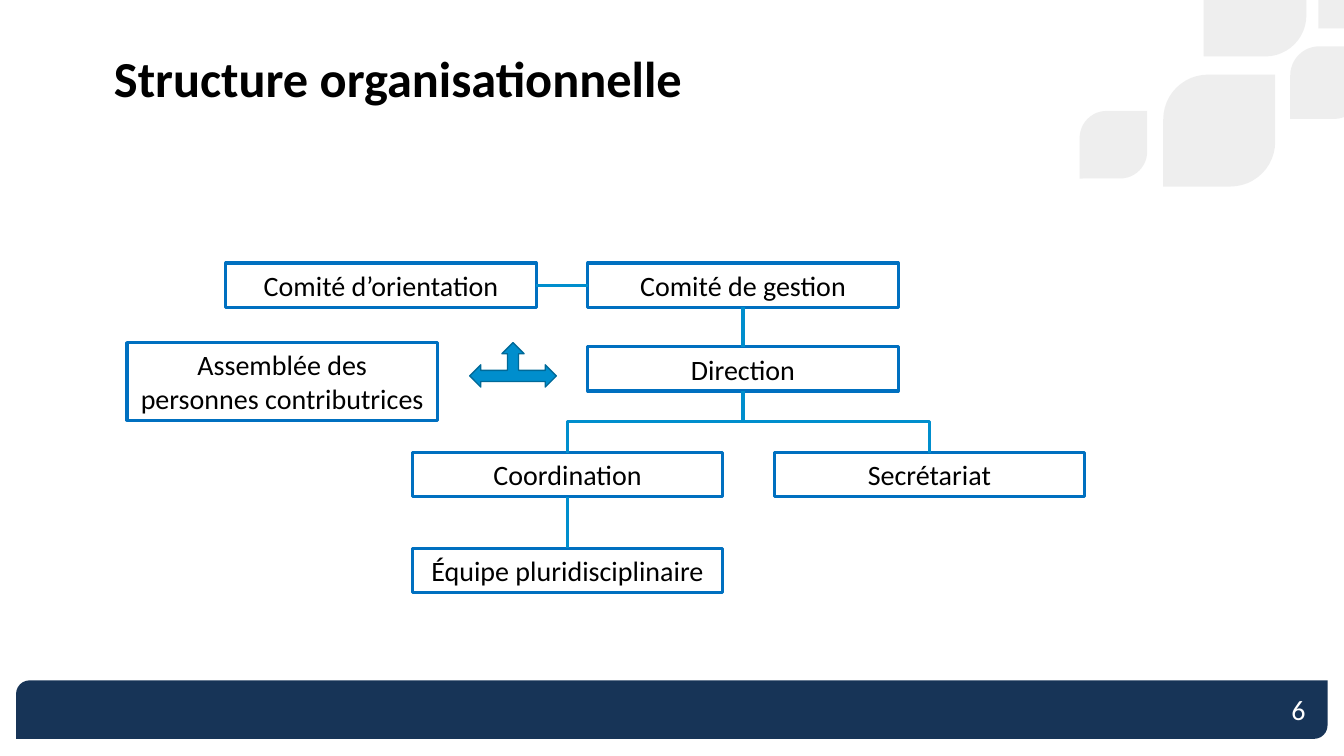
from dataclasses import dataclass

from lxml import etree
from pptx import Presentation
from pptx import util as u
from pptx.dml.color import RGBColor
from pptx.enum import shapes, text
from pptx.oxml.ns import qn

W, H = u.Inches(13.333), u.Inches(7.5)
BOX_W, ONE_LINE, TWO_LINES = 23.1, 5.87, 10.27
TOP, BOTTOM, LEFT, RIGHT = 0, 2, 1, 3

BOXES = {
    "orientation": ("Comité d’orientation", 16.8, 34.8, ONE_LINE),
    "assemblee": ("Assemblée des personnes contributrices", 9.45, 45.33, TWO_LINES),
    "coordination": ("Coordination", 30.68, 59.87, ONE_LINE),
    "direction": ("Direction", 43.73, 45.87, ONE_LINE),
    "gestion": ("Comité de gestion", 43.73, 34.8, ONE_LINE),
    "secretariat": ("Secrétariat", 57.6, 59.87, ONE_LINE),
    "equipe": ("Équipe pluridisciplinaire", 30.68, 72.53, ONE_LINE),
}
LINKS = [
    ("gestion", BOTTOM, "direction", TOP),
    ("direction", BOTTOM, "secretariat", TOP),
    ("direction", BOTTOM, "coordination", TOP),
    ("coordination", BOTTOM, "equipe", TOP),
    ("orientation", RIGHT, "gestion", LEFT),
]
LEAVES = [
    (86.55, 9.87, 8.33),
    (96, 6.13, 5.4),
    (89.55, -6.13, 7.65),
    (98.1, -3.87, 4.28),
    (80.33, 14.67, 5.03),
]


@dataclass(frozen=True)
class Theme:
    """Colours, font and type sizes of the slide."""
    font: str = "Calibri"
    ink: str = "000000"
    paper: str = "FFFFFF"
    leaf: str = "E8E8E8"
    navy: str = "173457"
    border: str = "0070C0"
    link: str = "008ECD"
    arrow_edge: str = "006998"
    title: int = 36
    body: int = 20
    stroke: float = 2.25


THEME = Theme()


def area(x, y, w, h):
    """Turn percentages of the slide's width and height into lengths."""
    return [round(v * side / 100) for v, side in zip((x, y, w, h), (W, H, W, H))]


def set_all(obj, values):
    """Set every attribute named in a dict."""
    for name, value in values.items():
        setattr(obj, name, value)


def write(tf, words, size, color, align, bold=False, grow=True):
    """Fill a text frame with one formatted paragraph."""
    fit = text.MSO_AUTO_SIZE.SHAPE_TO_FIT_TEXT if grow else text.MSO_AUTO_SIZE.NONE
    set_all(tf, {"word_wrap": True, "auto_size": fit,
                 "vertical_anchor": text.MSO_ANCHOR.MIDDLE})
    p = tf.paragraphs[0]
    p.alignment = align
    r = p.add_run()
    r.text = words
    set_all(r.font, {"name": THEME.font, "size": u.Pt(size), "bold": bold})
    r.font.color.rgb = RGBColor.from_string(color)


def add_shape(s, kind, box, fill=None, line=None, width=1, adj=None):
    """Add a preset shape with its fill and outline."""
    sp = s.shapes.add_shape(kind, *box)
    sp.shadow.inherit = False
    if fill:
        sp.fill.solid()
        sp.fill.fore_color.rgb = RGBColor.from_string(fill)
    else:
        sp.fill.background()
    if line:
        sp.line.color.rgb = RGBColor.from_string(line)
        sp.line.width = u.Pt(width)
    else:
        sp.line.fill.background()
    if adj is not None:
        sp.adjustments[0] = adj
    return sp


def add_leaf(s, x, y, side):
    """Add a translucent square leaf."""
    left, top, size, _ = area(x, y, side, 0)
    sp = add_shape(s, shapes.MSO_SHAPE.ROUND_2_DIAG_RECTANGLE,
                   (left, top, size, size), THEME.leaf, adj=0.4)
    color = sp._element.spPr.find(".//" + qn("a:srgbClr"))
    etree.SubElement(color, qn("a:alpha")).set("val", "70000")


def add_box(s, words, x, y, h):
    """Add an outlined box of the organisation chart."""
    sp = add_shape(s, shapes.MSO_SHAPE.RECTANGLE, area(x, y, BOX_W, h),
                   line=THEME.border, width=THEME.stroke)
    write(sp.text_frame, words, THEME.body, THEME.ink, text.PP_ALIGN.CENTER)
    return sp


def turn_elbow(cn):
    """Make an elbow leave and arrive vertically."""
    to_right = cn.end_x > cn.begin_x
    x, y, w, h = cn.left, cn.top, cn.width, cn.height
    set_all(cn, {"left": x + (w - h) // 2, "top": y + (h - w) // 2,
                 "width": h, "height": w})
    xfrm = cn._element.spPr.find(qn("a:xfrm"))
    xfrm.attrib.clear()
    xfrm.set("rot", "16200000" if to_right else "5400000")
    if to_right:
        xfrm.set("flipH", "1")


def add_link(s, start, start_site, end, end_site):
    """Join two boxes, with an elbow where they are not aligned."""
    bent = start_site == BOTTOM and abs(
        start.left + start.width // 2 - end.left - end.width // 2) > u.Inches(0.1)
    kind = shapes.MSO_CONNECTOR.ELBOW if bent else shapes.MSO_CONNECTOR.STRAIGHT
    cn = s.shapes.add_connector(kind, 0, 0, 0, 0)
    cn.begin_connect(start, start_site)
    cn.end_connect(end, end_site)
    cn.line.color.rgb = RGBColor.from_string(THEME.link)
    cn.line.width = u.Pt(THEME.stroke)
    etree.SubElement(cn._element.spPr, qn("a:effectLst"))
    if bent:
        turn_elbow(cn)


def add_title(s, words):
    """Place and format the title above the background."""
    sp = s.shapes.title
    s.shapes._spTree.append(sp._element)
    set_all(sp, dict(zip(("left", "top", "width", "height"),
                         area(7.73, 5.47, 77.78, 9.47))))
    write(sp.text_frame, words, THEME.title, THEME.ink, text.PP_ALIGN.LEFT, bold=True)


def add_page_number(s, number):
    """Add the page number in the footer bar."""
    sp = s.shapes.add_textbox(*area(91.05, 91.2, 6.83, 5.33))
    write(sp.text_frame, number, THEME.body, THEME.paper, text.PP_ALIGN.RIGHT, grow=False)


def main():
    """Build the slide and save it."""
    prs = Presentation()
    set_all(prs, {"slide_width": W, "slide_height": H})
    s = prs.slides.add_slide(prs.slide_layouts[5])
    for leaf in LEAVES:
        add_leaf(s, *leaf)
    add_shape(s, shapes.MSO_SHAPE.ROUND_2_DIAG_RECTANGLE,
              area(1.2, 90, 97.58, 7.73), THEME.navy, adj=0.23)
    add_page_number(s, "6")
    add_title(s, "Structure organisationnelle")
    boxes = {name: add_box(s, *values) for name, values in BOXES.items()}
    for start, start_site, end, end_site in LINKS:
        add_link(s, boxes[start], start_site, boxes[end], end_site)
    add_shape(s, shapes.MSO_SHAPE.LEFT_RIGHT_UP_ARROW, area(34.95, 45.33, 6.45, 5.87),
              THEME.link, THEME.arrow_edge)
    prs.save("out.pptx")


if __name__ == "__main__":
    main()
